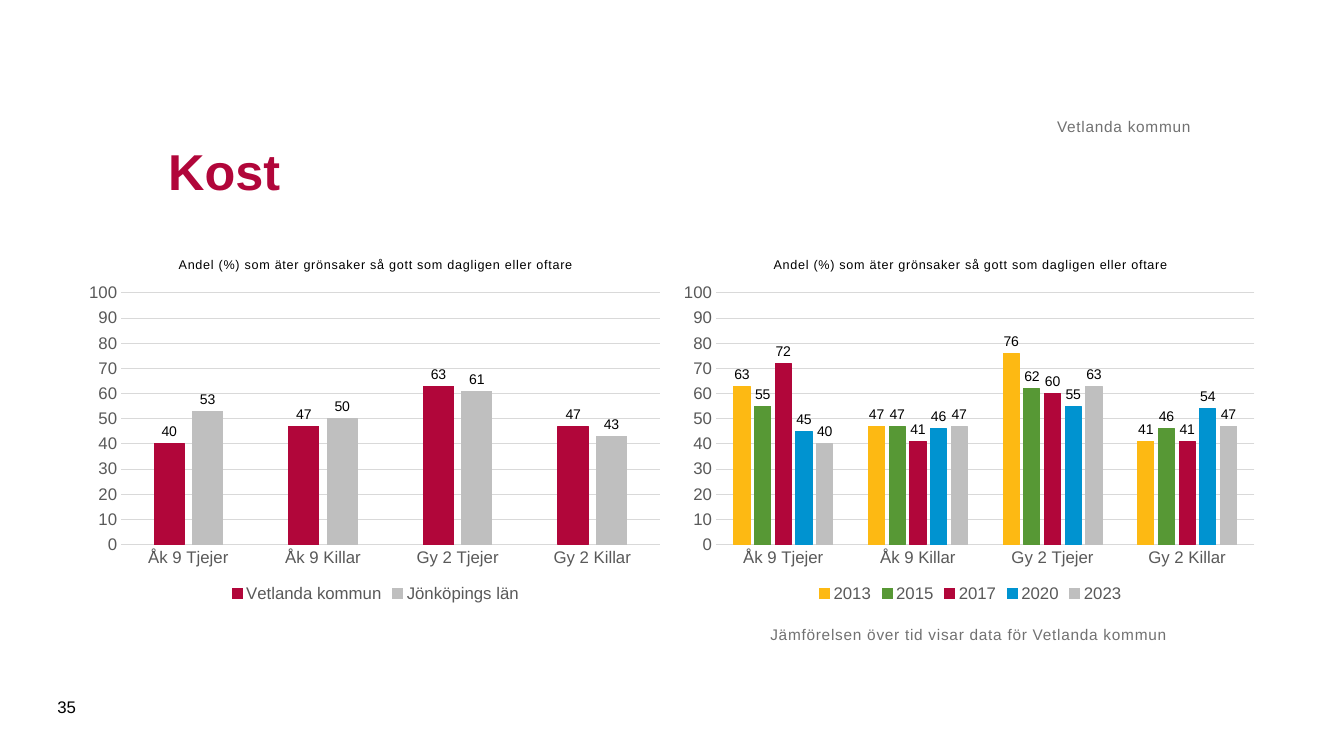
"""Build the slide on diet in Vetlanda: two column charts with captions."""
from lxml import etree
from pptx import Presentation
from pptx.chart.data import CategoryChartData
from pptx.dml.color import RGBColor
from pptx.enum.chart import XL_CHART_TYPE, XL_LABEL_POSITION, XL_LEGEND_POSITION, XL_TICK_MARK
from pptx.enum.text import MSO_ANCHOR, PP_ALIGN
from pptx.oxml import parse_xml
from pptx.oxml.ns import nsdecls, qn
from pptx.util import Inches, Pt

COLUMNS = XL_CHART_TYPE.COLUMN_CLUSTERED
OUTSIDE_END = XL_LABEL_POSITION.OUTSIDE_END
LEGEND_BOTTOM = XL_LEGEND_POSITION.BOTTOM
NO_TICK = XL_TICK_MARK.NONE
TOP, MIDDLE, BOTTOM = MSO_ANCHOR.TOP, MSO_ANCHOR.MIDDLE, MSO_ANCHOR.BOTTOM
LEFT, RIGHT = PP_ALIGN.LEFT, PP_ALIGN.RIGHT

BLACK = RGBColor(0x00, 0x00, 0x00)
CRIMSON = RGBColor(0xB1, 0x06, 0x3A)
YELLOW = RGBColor(0xFD, 0xB9, 0x13)
GREEN = RGBColor(0x57, 0x98, 0x35)
BLUE = RGBColor(0x00, 0x93, 0xD0)
SILVER = RGBColor(0xBF, 0xBF, 0xBF)
GRID_GREY = RGBColor(0xD9, 0xD9, 0xD9)
AXIS_GREY = RGBColor(0x59, 0x59, 0x59)
CAPTION_GREY = RGBColor(0x71, 0x71, 0x71)

NUMBER_FORMAT = "#,##0;#,##0"
QUESTION = "Andel (%) som äter grönsaker så gott som dagligen eller oftare"
GROUPS = ["Åk 9 Tjejer", "Åk 9 Killar", "Gy 2 Tjejer", "Gy 2 Killar"]
BY_AREA = [
    ("Vetlanda kommun", (40, 47, 63, 47), CRIMSON),
    ("Jönköpings län", (53, 50, 61, 43), SILVER),
]
BY_YEAR = [
    ("2013", (63, 47, 76, 41), YELLOW),
    ("2015", (55, 47, 62, 46), GREEN),
    ("2017", (72, 41, 60, 41), CRIMSON),
    ("2020", (45, 46, 55, 54), BLUE),
    ("2023", (40, 47, 63, 47), SILVER),
]
PLOT_AREA = {"x": 0.07, "y": 0.14, "w": 0.91, "h": 0.69}


class SlideBuilder:
    """Hold the slide and its style."""

    def __init__(self, slide, typeface="Arial"):
        self.slide = slide
        self.typeface = typeface

    def style(self, font, size, color, bold=False):
        """Set a font."""
        font.name, font.size, font.bold = self.typeface, Pt(size), bold
        font.color.rgb = color

    def put_text(self, frame, text, size=11, color=CAPTION_GREY, bold=False,
                 align=LEFT, spacing=0):
        """Put one formatted run into a text frame."""
        paragraph = frame.paragraphs[0]
        paragraph.alignment = align
        run = paragraph.add_run()
        run.text = text
        self.style(run.font, size, color, bold)
        if spacing:
            run.font._element.set("spc", str(round(spacing * 100)))

    def text_box(self, text, box, anchor=TOP, inset=True, **text_format):
        """Add a wrapped text box."""
        frame = self.slide.shapes.add_textbox(*map(Inches, box)).text_frame
        frame.word_wrap = True
        frame.vertical_anchor = anchor
        if not inset:
            frame.margin_left = frame.margin_right = 0
            frame.margin_top = frame.margin_bottom = 0
        self.put_text(frame, text, **text_format)

    def column_chart(self, rows, left):
        """Add a clustered column chart."""
        data = CategoryChartData(number_format=NUMBER_FORMAT)
        data.categories = GROUPS
        for name, values, _ in rows:
            data.add_series(name, values)
        place = map(Inches, (left, 2.4, 5.87, 3.62))
        chart = self.slide.shapes.add_chart(COLUMNS, *place, data).chart
        self.style(chart.font, 10, BLACK)
        self.put_text(chart.chart_title.text_frame, QUESTION, size=9,
                      color=BLACK, spacing=0.5)
        chart.chart_title.include_in_layout = False
        chart.has_legend = True
        chart.legend.position = LEGEND_BOTTOM
        chart.legend.include_in_layout = False
        self.style(chart.legend.font, 12, AXIS_GREY)
        self.axes(chart)
        self.columns(chart.plots[0], [color for _, _, color in rows])
        self.place_plot(chart)

    def axes(self, chart):
        """Format both axes and the grid."""
        scale, groups = chart.value_axis, chart.category_axis
        for axis in (scale, groups):
            axis.major_tick_mark = axis.minor_tick_mark = NO_TICK
            self.style(axis.tick_labels.font, 12, AXIS_GREY)
        scale.minimum_scale, scale.maximum_scale, scale.major_unit = 0, 100, 10
        scale.tick_labels.number_format = NUMBER_FORMAT
        scale.tick_labels.number_format_is_linked = False
        scale.format.line.fill.background()
        for line in (groups.format.line, scale.major_gridlines.format.line):
            line.color.rgb, line.width = GRID_GREY, Pt(0.75)

    def columns(self, plot, colors):
        """Colour and label the columns."""
        plot.gap_width, plot.overlap, plot.vary_by_categories = 219, -27, False
        for series, color in zip(plot.series, colors):
            series.format.fill.solid()
            series.format.fill.fore_color.rgb = color
            series.format.line.color.rgb = color
            series.format.line.width = Pt(0.75)
            labels = series.data_labels
            labels.show_value = True
            labels.position = OUTSIDE_END
            labels.number_format = NUMBER_FORMAT
            labels.number_format_is_linked = False
            self.style(labels.font, 10, BLACK)

    def place_plot(self, chart):
        """Fix the inner plot area as fractions of the chart."""
        plot_area = chart._chartSpace.chart.plotArea
        for former in plot_area.findall(qn("c:layout")):
            plot_area.remove(former)
        layout = parse_xml(f"<c:layout {nsdecls('c')}><c:manualLayout/></c:layout>")
        settings = {"layoutTarget": "inner", "xMode": "edge", "yMode": "edge", **PLOT_AREA}
        for tag, value in settings.items():
            etree.SubElement(layout[0], qn(f"c:{tag}")).set("val", str(value))
        plot_area.insert(0, layout)


def main():
    """Build and save the slide."""
    deck = Presentation()
    deck.slide_width, deck.slide_height = Inches(13.33), Inches(7.5)
    builder = SlideBuilder(deck.slides.add_slide(deck.slide_layouts[6]))
    builder.column_chart(BY_AREA, 0.79)
    builder.column_chart(BY_YEAR, 6.69)
    builder.text_box("Kost", (1.57, 0.98, 10.24, 1.42), anchor=MIDDLE,
                     size=36, color=CRIMSON, bold=True)
    builder.text_box("Jämförelsen över tid visar data för Vetlanda kommun",
                     (7.64, 6.2, 5.31, 0.94), inset=False, spacing=0.5)
    builder.text_box("Vetlanda kommun", (1.57, 0.62, 10.24, 0.73), anchor=BOTTOM,
                     inset=False, align=RIGHT, spacing=0.5)
    builder.text_box("35", (0.47, 6.81, 0.57, 0.4), anchor=MIDDLE, size=12, color=BLACK)
    deck.save("out.pptx")


if __name__ == "__main__":
    main()
